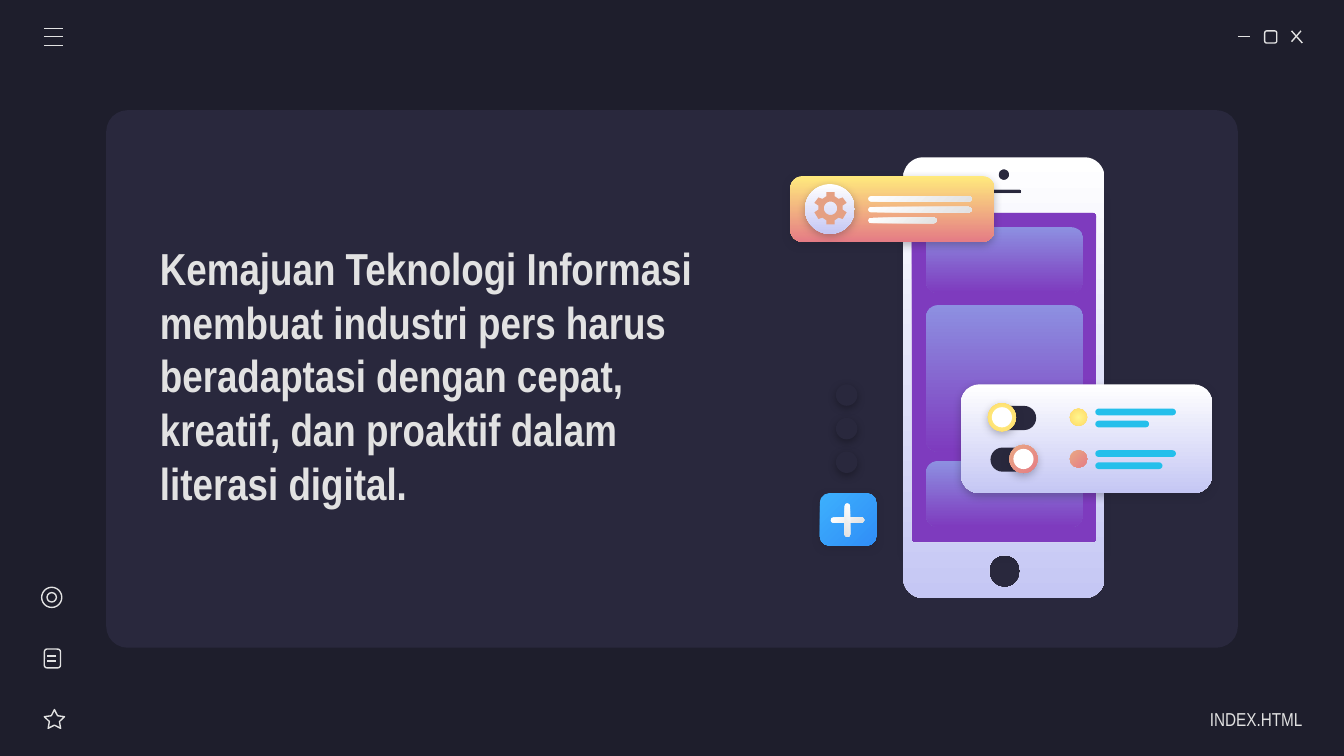
from math import cos, radians, sin

from lxml import etree
from pptx import Presentation
from pptx.dml.color import RGBColor
from pptx.enum.shapes import MSO_CONNECTOR, MSO_SHAPE
from pptx.enum.text import MSO_ANCHOR, MSO_AUTO_SIZE, PP_ALIGN
from pptx.oxml.ns import qn
from pptx.util import Inches, Pt

COLORS = {
    "background": "1E1E2C", "panel": "29283D", "text": "E2E2E2",
    "white": "FFFFFF", "black": "000000", "lavender": "C5C7F4",
    "purple": "7E3BBE", "periwinkle": "8D90E1", "yellow": "FFEA7D",
    "pink": "E57C85", "peach": "E9A984", "gear": "E5A083",
    "lemon": "FFF68E", "gold": "FFD966", "cyan": "24BFEB",
    "sky": "3DB0FD", "blue": "308EF7",
}
FONT = "Arial Narrow"

# Gradients: first colour, last colour, clockwise angle (None is radial)
SCREEN = ("periwinkle", "purple", 90)
SILVER = ("white", "lavender", 90)
SUNSET = ("yellow", "pink", 90)
BAR = ("white", "text", 45)
GOLD = ("lemon", "gold", None)
CORAL = ("peach", "pink", 45)
BLUE = ("sky", "blue", 45)


def rgb(name):
    return RGBColor.from_string(COLORS[name])


def rounded_outline(left, top, width, height, radius):
    """Points of a rounded rectangle, clockwise from its right side."""
    points = []
    for corner, (right, bottom) in enumerate([(1, 1), (0, 1), (0, 0), (1, 0)]):
        center_x = left + width - radius if right else left + radius
        center_y = top + height - radius if bottom else top + radius
        for step in range(9):
            angle = radians(90 * corner + 90 * step / 8)
            points.append((center_x + radius * cos(angle),
                           center_y + radius * sin(angle)))
    return points


class SlideBuilder:
    def __init__(self, slide):
        self.slide = slide
        self.shapes = slide.shapes

    def paint(self, shape, fill, shadow=None):
        shape.shadow.inherit = False
        shape.line.fill.background()
        if isinstance(fill, tuple):
            first, last, angle = fill
            shape.fill.gradient()
            for stop, color in zip(shape.fill.gradient_stops, (first, last)):
                stop.color.rgb = rgb(color)
            if angle is None:
                linear = shape.element.spPr.find(".//" + qn("a:lin"))
                radial = etree.Element(qn("a:path"), path="circle")
                etree.SubElement(radial, qn("a:fillToRect"),
                                 {side: "50000" for side in "ltrb"})
                linear.getparent().replace(linear, radial)
            else:
                shape.fill.gradient_angle = 360 - angle
        else:
            shape.fill.solid()
            shape.fill.fore_color.rgb = rgb(fill)
        if shadow:
            effects = shape.element.spPr.find(qn("a:effectLst"))
            outer = etree.SubElement(
                effects, qn("a:outerShdw"), blurRad=str(Pt(4.5)),
                dist=str(Pt(1.5)), dir="5400000", algn="bl", rotWithShape="0")
            color = etree.SubElement(outer, qn("a:srgbClr"), val=COLORS[shadow])
            etree.SubElement(color, qn("a:alpha"), val="30000")
        return shape

    def preset(self, kind, box, fill, shadow=None, rounding=None, rotation=0):
        shape = self.shapes.add_shape(kind, *map(Inches, box))
        if rounding is not None:
            shape.adjustments[0] = rounding
        shape.rotation = rotation
        return self.paint(shape, fill, shadow)

    def box(self, box, fill, rounding, shadow=None, rotation=0):
        return self.preset(MSO_SHAPE.ROUNDED_RECTANGLE, box, fill, shadow,
                           rounding, rotation)

    def circle(self, left, top, size, fill, shadow=None):
        return self.preset(MSO_SHAPE.OVAL, (left, top, size, size), fill, shadow)

    def icon(self, kind, *box):
        shape = self.shapes.add_shape(kind, *map(Inches, box))
        shape.shadow.inherit = False
        shape.fill.background()
        shape.line.color.rgb = rgb("text")
        shape.line.width = Pt(0.75)
        return shape

    def line(self, *ends):
        connector = self.shapes.add_connector(MSO_CONNECTOR.STRAIGHT,
                                              *map(Inches, ends))
        connector.line.color.rgb = rgb("text")
        connector.line.width = Pt(0.75)
        etree.SubElement(connector.element.spPr, qn("a:effectLst"))

    def freeform(self, outlines, fill):
        contours = [[(Inches(x), Inches(y)) for x, y in outline]
                    for outline in outlines]
        builder = self.shapes.build_freeform(*contours[0][0])
        builder.add_line_segments(contours[0][1:])
        for contour in contours[1:]:
            builder.move_to(*contour[0])
            builder.add_line_segments(contour[1:])
        return self.paint(builder.convert_to_shape(), fill)

    def text(self, shape, box, words, size, bold=True, align=PP_ALIGN.LEFT,
             right_inset=0.1, indent=0):
        shape.left, shape.top, shape.width, shape.height = map(Inches, box)
        frame = shape.text_frame
        frame.text = words
        frame.word_wrap = True
        frame.auto_size = MSO_AUTO_SIZE.NONE
        frame.vertical_anchor = MSO_ANCHOR.MIDDLE
        frame.margin_left = frame.margin_top = frame.margin_bottom = Inches(0.1)
        frame.margin_right = Inches(right_inset)
        paragraph = frame.paragraphs[0]
        paragraph.alignment = align
        properties = paragraph._p.get_or_add_pPr()
        properties.set("marL", str(Inches(indent)))
        properties.set("indent", "0")
        font = paragraph.runs[0].font
        font.name, font.size, font.bold = FONT, Pt(size), bold
        font.color.rgb = rgb("text")

    def title(self, box, words, size, indent):
        shape = self.shapes.title
        self.text(shape, box, words, size, indent=indent)
        # Bring the placeholder in front of the panel
        shape.element.getparent().append(shape.element)


def main():
    presentation = Presentation()
    presentation.slide_width = Inches(10)
    presentation.slide_height = Inches(10 * 9 / 16)
    slide = presentation.slides.add_slide(presentation.slide_layouts[5])
    slide.background.fill.solid()
    slide.background.fill.fore_color.rgb = rgb("background")
    builder = SlideBuilder(slide)

    # Content panel
    builder.box((0.79, 0.82, 8.42, 4), "panel", 0.04)

    # Window controls
    builder.line(9.21, 0.27, 9.3, 0.27)
    builder.icon(MSO_SHAPE.ROUNDED_RECTANGLE, 9.41, 0.23, 0.09, 0.09)
    builder.line(9.61, 0.23, 9.69, 0.32)
    builder.line(9.68, 0.23, 9.61, 0.31)

    # Menu and side icons
    for y in (0.21, 0.27, 0.34):
        builder.line(0.33, y, 0.47, y)
    star = builder.icon(MSO_SHAPE.STAR_5_POINT, 0.33, 5.28, 0.15, 0.14)
    star.adjustments[0] = 0.25
    builder.icon(MSO_SHAPE.ROUNDED_RECTANGLE, 0.33, 4.83, 0.12, 0.14)
    for y in (4.88, 4.92):
        builder.line(0.35, y, 0.42, y)
    builder.icon(MSO_SHAPE.OVAL, 0.31, 4.37, 0.15, 0.15)
    builder.icon(MSO_SHAPE.OVAL, 0.35, 4.41, 0.07, 0.07)

    # Page label and title
    label = builder.shapes.add_textbox(0, 0, 0, 0)
    builder.text(label, (8.52, 5.2, 1.17, 0.3), "INDEX.HTML", 10, bold=False,
                 align=PP_ALIGN.RIGHT, right_inset=0)
    builder.title((0.92, 1.41, 4.55, 2.76),
                  "Kemajuan Teknologi Informasi membuat industri pers harus "
                  "beradaptasi dengan cepat, kreatif, dan proaktif dalam "
                  "literasi digital.", 24, indent=0.17)

    # Phone: screen, its panels, then the frame with openings
    builder.box((6.74, 1.47, 1.46, 2.63), "purple", 0, "background")
    for top, height in ((1.69, 0.49), (2.27, 1.09), (3.43, 0.49)):
        builder.box((6.89, top, 1.17, height), SCREEN, 0.09 / height)
    builder.freeform([
        rounded_outline(6.72, 1.17, 1.5, 3.28, 0.15),
        rounded_outline(6.78, 1.58, 1.38, 2.46, 0.03),
        rounded_outline(7.43, 1.26, 0.08, 0.08, 0.04),
        rounded_outline(7.35, 1.41, 0.25, 0.03, 0.01),
        rounded_outline(7.36, 4.13, 0.23, 0.24, 0.11),
    ], SILVER)

    # Settings card with gear
    builder.box((5.88, 1.31, 1.52, 0.49), SUNSET, 0.19, "background")
    builder.circle(5.99, 1.37, 0.37, SILVER, "background")
    half_gear = [(0.03, -0.12), (0.03, -0.09), (0.06, -0.07), (0.09, -0.08),
                 (0.12, -0.04), (0.09, -0.02), (0.09, 0.01), (0.12, 0.03),
                 (0.09, 0.08), (0.06, 0.07), (0.03, 0.09), (0.03, 0.12)]
    gear = half_gear + [(-x, y) for x, y in reversed(half_gear)]
    builder.freeform([[(6.18 + x, 1.55 + y) for x, y in gear],
                      rounded_outline(6.13, 1.5, 0.1, 0.1, 0.05)], "gear")
    for row, width in enumerate((0.77, 0.77, 0.51)):
        builder.box((6.46, 1.46 + 0.08 * row, width, 0.04), BAR, 0.5)

    # Toggle card
    builder.box((7.15, 2.86, 1.87, 0.81), SILVER, 0.17, "background")
    toggles = ((3, 7.35, GOLD, 0.4), (3.31, 7.51, CORAL, 0.5))
    for top, knob, color, short_bar in toggles:
        builder.box((7.37, top + 0.02, 0.34, 0.18), "panel", 0.5)
        builder.circle(knob, top, 0.21, color, "background")
        builder.circle(knob + 0.03, top + 0.03, 0.15, "white")
        builder.circle(7.96, top + 0.04, 0.13, color)
        for offset, width in ((0.04, 0.6), (0.13, short_bar)):
            builder.box((8.15, top + offset, width, 0.05), "cyan", 0.5)

    # Plus button and dots
    builder.box((6.1, 3.67, 0.42, 0.39), BLUE, 0.18, "background")
    for rotation in (0, 90):
        builder.box((6.18, 3.85, 0.25, 0.04), BAR, 0.5, rotation=rotation)
    for row in range(3):
        builder.circle(6.22, 3.36 - 0.25 * row, 0.16, "panel", "black")

    presentation.save("out.pptx")


if __name__ == "__main__":
    main()
